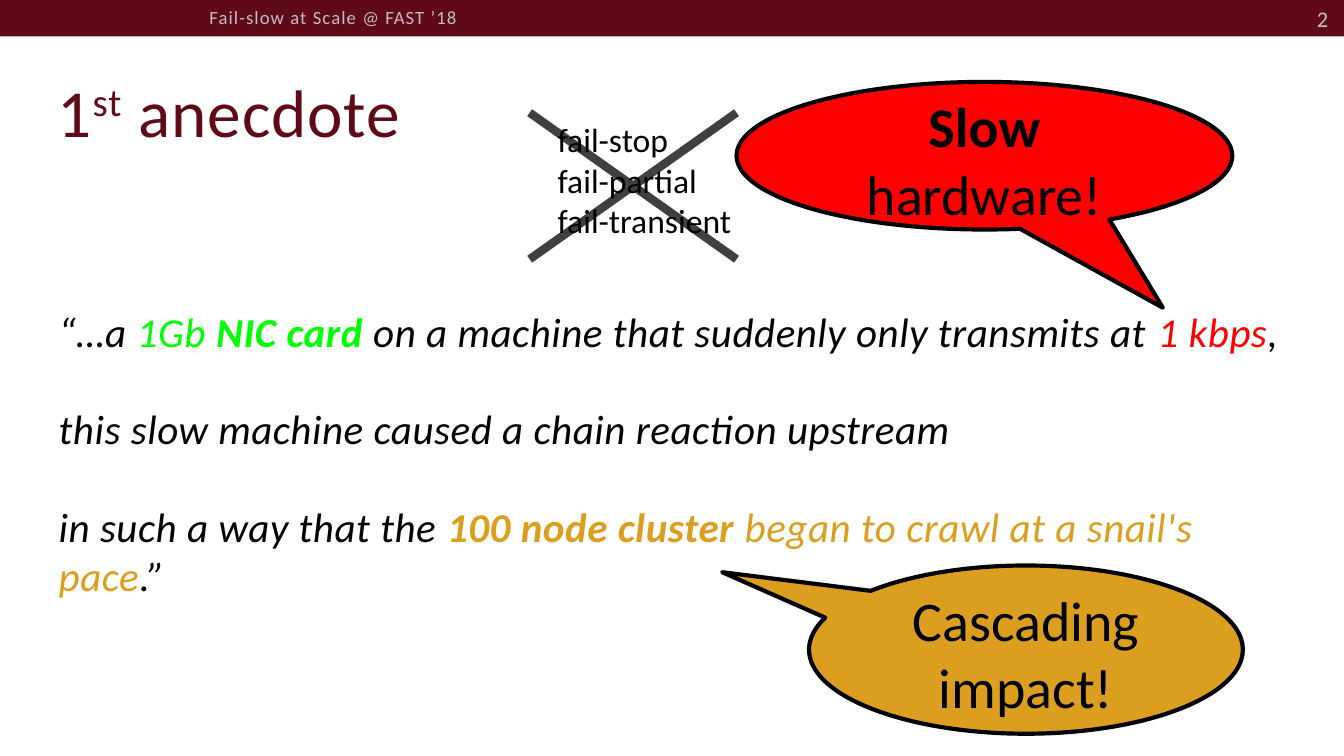
from pptx import Presentation
from pptx.dml.color import RGBColor
from pptx.enum.shapes import MSO_CONNECTOR as Connector, MSO_SHAPE as Shape
from pptx.enum.text import MSO_ANCHOR as Anchor, PP_ALIGN as Align
from pptx.oxml.ns import qn
from pptx.util import Cm, Pt
from lxml.etree import SubElement

COLORS = {
    "maroon": "600A18", "silver": "BFBFBF", "black": "000000", "charcoal": "404040",
    "green": "00FF00", "red": "FF0000", "gold": "DC9E1F",
}
SLIDE_WIDTH, SLIDE_HEIGHT = 25.4, 14.29


def rgb(name):
    """Look up a palette colour."""
    return RGBColor.from_string(COLORS[name])


def add_paragraph(frame, runs, size, color="black", align=Align.LEFT,
                  italic=False, tracking=0, first=False):
    """Write one paragraph from (text, style) pairs."""
    paragraph = frame.paragraphs[0] if first else frame.add_paragraph()
    paragraph.alignment = align
    paragraph.font.name = "Calibri"
    paragraph.font.size = Pt(size)
    paragraph.font.italic = italic
    paragraph.font.color.rgb = rgb(color)
    for text, style in runs:
        run = paragraph.add_run()
        run.text = text
        run.font.color.rgb = rgb(style.get("color", color))
        if style.get("bold"):
            run.font.bold = True
        properties = run._r.get_or_add_rPr()
        if tracking:
            properties.set("spc", str(round(tracking * 100)))
        if style.get("raised"):
            properties.set("baseline", "30000")
    return paragraph


def add_text(slide, box, paragraphs, size, anchor=Anchor.TOP, gap=0, wrap=True, **style):
    """Place a text box with evenly spaced paragraphs."""
    frame = slide.shapes.add_textbox(*map(Cm, box)).text_frame
    frame.word_wrap = wrap
    frame.vertical_anchor = anchor
    for index, runs in enumerate(paragraphs):
        paragraph = add_paragraph(frame, runs, size, first=index == 0, **style)
        if index:
            paragraph.space_before = Pt(gap)


def add_header(slide, box):
    """Draw the top bar with the talk name and page number."""
    left, top, width, height = box
    bar = slide.shapes.add_shape(Shape.RECTANGLE, *map(Cm, box))
    bar.shadow.inherit = False
    bar.fill.solid()
    bar.fill.fore_color.rgb = rgb("maroon")
    bar.line.fill.background()
    add_text(slide, (left + 3.71, top + 0.05, 9.04, 0.56),
             [[("Fail-slow at Scale @ FAST ’18", {})]], 10,
             Anchor.MIDDLE, color="silver", tracking=0.6)
    add_text(slide, (left + width - 2.29, top - 0.03, 2.24, 0.76),
             [[("2", {})]], 12, Anchor.MIDDLE, color="silver", align=Align.RIGHT)


def add_title(slide, box):
    """Write the slide title."""
    add_text(slide, box, [[("1", {}), ("st", {"raised": True}), (" anecdote", {})]],
             36, Anchor.BOTTOM, color="maroon", tracking=0.5)


def add_quote(slide, box):
    """Write the anecdote with its highlighted phrases."""
    add_text(slide, box, [
        [("“…a ", {}), ("1Gb ", {"color": "green"}),
         ("NIC card ", {"color": "green", "bold": True}),
         ("on a machine that suddenly only transmits at ", {}),
         ("1 kbps", {"color": "red"}), (",", {})],
        [("this slow machine caused a chain reaction upstream", {})],
        [("in such a way that the ", {}),
         ("100 node cluster", {"color": "gold", "bold": True}),
         (" began to crawl at a snail's pace", {"color": "gold"}), (".”", {})],
    ], 22, gap=26, italic=True, tracking=0.3)


def add_callout(slide, box, fill, tail, paragraphs):
    """Draw an elliptical speech bubble."""
    bubble = slide.shapes.add_shape(Shape.OVAL_CALLOUT, *map(Cm, box))
    bubble.shadow.inherit = False
    bubble.adjustments[0], bubble.adjustments[1] = tail
    bubble.fill.solid()
    bubble.fill.fore_color.rgb = rgb(fill)
    bubble.line.color.rgb = rgb("black")
    bubble.line.width = Pt(2.25)
    frame = bubble.text_frame
    frame.word_wrap = True
    frame.vertical_anchor = Anchor.MIDDLE
    frame.margin_bottom = 0
    for index, runs in enumerate(paragraphs):
        add_paragraph(frame, runs, 30, align=Align.CENTER, first=index == 0)


def add_crossed_modes(slide, box):
    """List the failure modes and cross them out."""
    left, top, width, height = box
    right, bottom = left + width, top + height
    for start, end in ((top, bottom), (bottom, top)):
        stroke = slide.shapes.add_connector(
            Connector.STRAIGHT, Cm(left), Cm(start), Cm(right), Cm(end))
        stroke.line.color.rgb = rgb("charcoal")
        stroke.line.width = Pt(4.5)
        SubElement(stroke._element.spPr, qn("a:effectLst"))
    modes = ("fail-stop", "fail-partial", "fail-transient")
    add_text(slide, (left + 0.28, top, 3.99, 2.57),
             [[(mode, {})] for mode in modes], 18, wrap=False)


def main():
    """Build the anecdote slide."""
    deck = Presentation()
    deck.slide_width, deck.slide_height = Cm(SLIDE_WIDTH), Cm(SLIDE_HEIGHT)
    slide = deck.slides.add_slide(deck.slide_layouts[6])
    add_header(slide, (0, 0, SLIDE_WIDTH, 0.69))
    add_title(slide, (0.84, 0.58, 23.67, 2.39))
    add_quote(slide, (0.86, 5.66, 23.65, 8.38))
    add_callout(slide, (15.29, 10.69, 8.2, 3.18), "gold", (-0.7, -0.46),
                [[("Cascading", {})], [("impact!", {})]])
    add_callout(slide, (13.92, 1.55, 9.37, 2.79), "red", (0.36, 1.03),
                [[("Slow", {"bold": True}), (" hardware!", {})]])
    add_crossed_modes(slide, (10.01, 2.13, 3.91, 2.77))
    deck.save("out.pptx")


if __name__ == "__main__":
    main()
